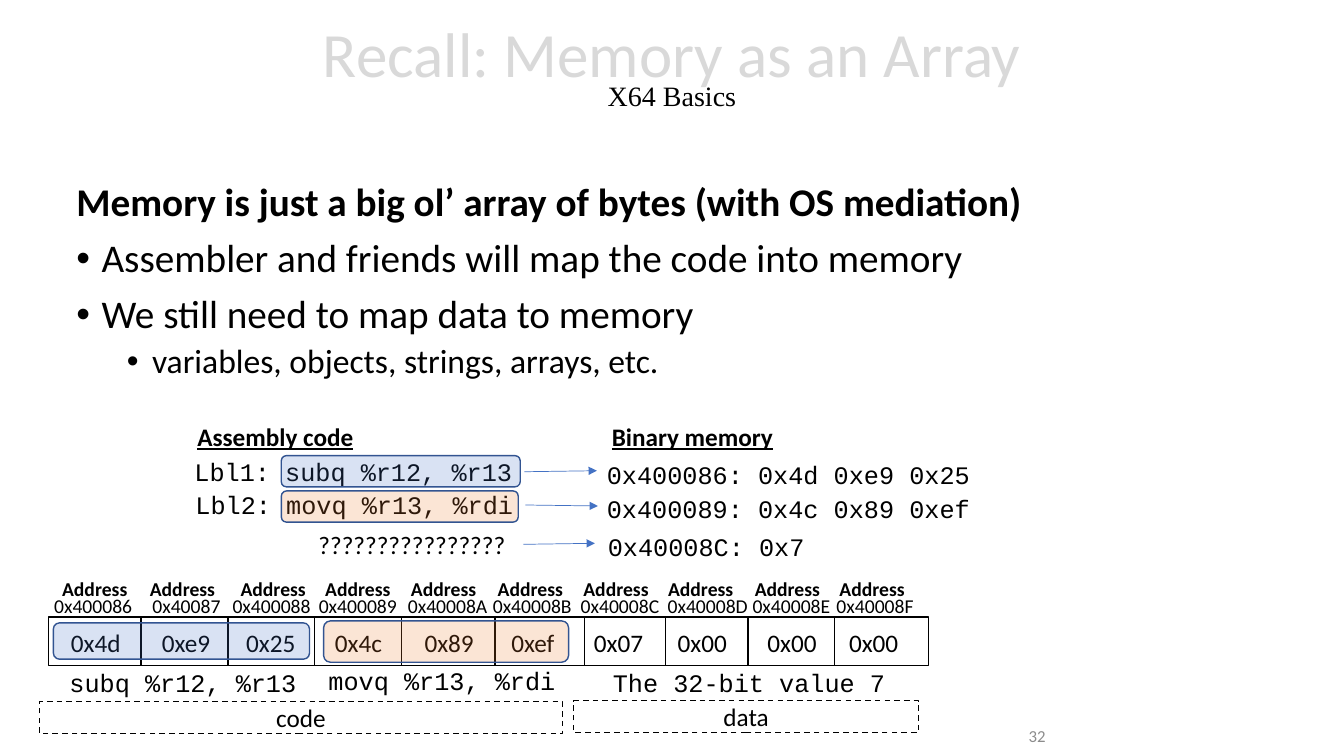
from lxml.etree import SubElement
from pptx import Presentation
from pptx.dml.color import RGBColor
from pptx.enum.dml import MSO_LINE
from pptx.enum.shapes import MSO_CONNECTOR, MSO_SHAPE
from pptx.enum.text import MSO_ANCHOR, MSO_AUTO_SIZE, PP_ALIGN
from pptx.oxml.ns import qn
from pptx.util import Inches, Pt

COLORS = {"black": "000000", "white": "FFFFFF", "title": "D9D9D9", "number": "8C8C8C",
          "blue": "4472C4", "orange": "ED7D31", "border": "325491"}
COLUMN = ROW = Inches(0.1)
MONO = "Courier New"
CELL_TOP, CELL_WIDTH, CELL_HEIGHT = 61.2, 9.3, 4.8
DRAW_ORDER = (7, 8, 9, 6, 5, 0, 1, 2, 3, 4)

# fmt: off
MEMORY = [
    ("0x400086", "0x4d", 4.8, 9.4, 9.25, 9.5),
    ("0x40087", "0xe9", 14, 18.1, 18.5, 18.45),
    ("0x400088", "0x25", 22.6, 27.1, 26.95, 26.85),
    ("0x400089", "0x4c", 31.2, 35.5, 35.5, 35.55),
    ("0x40008A", "0x89", 39.8, 44, 44.4, 44.55),
    ("0x40008B", "0xef", 48.7, 52.6, 52.8, 52.85),
    ("0x40008C", "0x07", 56.7, 61.1, 61.5, 61.35),
    ("0x40008D", "0x00", 65.6, 69.5, 70.2, 69.65),
    ("0x40008E", "0x00", 74.2, 78.1, 78.5, 78.55),
    ("0x40008F", "0x00", 82.8, 86.5, 86.8, 86.65),
]
# fmt: on


def color(name):
    return RGBColor.from_string(COLORS[name])


def grid(left, top, width, height):
    return [round(left * COLUMN), round(top * ROW), round(width * COLUMN), round(height * ROW)]


def add_span(para, text, size=18, font="Calibri", ink="black", bold=False, underline=False):
    span = para.add_run()
    span.text = text
    span.font.size = Pt(size)
    span.font.name = font
    span.font.color.rgb = color(ink)
    span.font.bold = bold
    span.font.underline = underline


def add_text(page, text, place, align=PP_ALIGN.LEFT, wrap=False, side=1, grow=True,
             anchor=MSO_ANCHOR.TOP, **span_format):
    box = page.shapes.add_textbox(*grid(*place))
    frame = box.text_frame
    frame.word_wrap = wrap
    frame.auto_size = MSO_AUTO_SIZE.SHAPE_TO_FIT_TEXT if grow else MSO_AUTO_SIZE.NONE
    frame.vertical_anchor = anchor
    frame.margin_left = frame.margin_right = round(side * COLUMN)
    para = frame.paragraphs[0]
    para.alignment = align
    add_span(para, text, **span_format)
    return box


def add_centered(page, text, center, top, width, height, **text_format):
    place = (center - width / 2, top, width, height)
    return add_text(page, text, place, align=PP_ALIGN.CENTER, **text_format)


def add_box(page, place, kind=MSO_SHAPE.RECTANGLE, fill="white", line="black",
            opacity=None, dashed=False, label=None):
    box = page.shapes.add_shape(kind, *grid(*place))
    box.shadow.inherit = False
    box.fill.solid()
    box.fill.fore_color.rgb = color(fill)
    if opacity:
        tint = box._element.spPr.find(qn("a:solidFill")).find(qn("a:srgbClr"))
        SubElement(tint, qn("a:alpha")).set("val", str(opacity * 1000))
    box.line.color.rgb = color(line)
    box.line.width = Pt(1)
    if dashed:
        box.line.dash_style = MSO_LINE.DASH
    if label:
        box.text_frame.vertical_anchor = MSO_ANCHOR.MIDDLE
        para = box.text_frame.paragraphs[0]
        para.alignment = PP_ALIGN.CENTER
        add_span(para, label)


def add_highlight(page, place, fill):
    add_box(page, place, kind=MSO_SHAPE.ROUNDED_RECTANGLE, fill=fill, line="border", opacity=20)


def add_arrow(page, start, end, source=None):
    points = [round(value * COLUMN) for value in start + end]
    arrow = page.shapes.add_connector(MSO_CONNECTOR.STRAIGHT, *points)
    if source is not None:
        arrow.begin_connect(source, 3)
    arrow.line.color.rgb = color("blue")
    arrow.line.width = Pt(0.5)
    properties = arrow._element.spPr
    SubElement(properties.find(qn("a:ln")), qn("a:tailEnd")).set("type", "triangle")
    SubElement(properties, qn("a:effectLst"))


def add_title(page):
    box = add_text(page, "Recall: Memory as an Array", (0, 0, 133.3, 14.5), wrap=True, grow=False,
                   align=PP_ALIGN.CENTER, anchor=MSO_ANCHOR.MIDDLE, size=45, ink="title")
    para = box.text_frame.paragraphs[0]
    para.line_spacing = 0.7
    para.add_line_break()
    add_span(para, "X64 Basics", size=20, font="Times New Roman")


def format_para(para, before, indent=None):
    para.line_spacing = 0.9
    para.space_before = Pt(before)
    if indent:
        properties = para._p.get_or_add_pPr()
        properties.set("marL", str(Inches(indent)))
        properties.set("indent", str(-Inches(0.25)))
        SubElement(properties, qn("a:buFont")).set("typeface", "Arial")
        SubElement(properties, qn("a:buChar")).set("char", "•")


def add_points(page):
    box = add_text(page, "Memory is just a big ol’ array of bytes (with OS mediation)",
                   (6.6, 17.6, 96.7, 22.6), wrap=True, grow=False, size=28, bold=True)
    format_para(box.text_frame.paragraphs[0], 10)
    for text, level, size, before, indent in (
        ("Assembler and friends will map the code into memory", 0, 28, 10, 0.25),
        ("We still need to map data to memory", 0, 28, 10, 0.25),
        ("variables, objects, strings, arrays, etc.", 1, 24, 5, 0.75),
    ):
        para = box.text_frame.add_paragraph()
        para.level = level
        format_para(para, before, indent)
        add_span(para, text, size=size)


def add_memory(page):
    for index in DRAW_ORDER:
        add_box(page, (MEMORY[index][2], CELL_TOP, CELL_WIDTH, CELL_HEIGHT))
    for address, value, _, label_center, address_center, value_center in MEMORY:
        add_centered(page, "Address", label_center, 56.7, 7.8, 3.4,
                     wrap=True, side=0, size=14, bold=True)
        add_centered(page, address, address_center, 58.4, 9, 3.4, wrap=True, side=0, size=14)
        add_centered(page, value, value_center, 61.7, 6.9, 4)
    add_highlight(page, (5.3, 61.8, 25.4, 3.6), "blue")
    add_highlight(page, (32.1, 61.6, 24.3, 4.1), "orange")
    for text, left, top, width in (("subq %r12, %r13", 5.9, 65.7, 24.6),
                                   ("movq %r13, %rdi", 31.6, 65.5, 24.6),
                                   ("The 32-bit value 7", 59.8, 65.7, 29.2)):
        add_text(page, text, (left, top, width, 4), font=MONO)
    add_box(page, (3.9, 69.6, 51.9, 3.2), dashed=True, label="code")
    add_box(page, (56.9, 69.5, 34.2, 3.2), dashed=True, label="data")


def add_mapping(page):
    add_text(page, "Assembly code", (18.6, 41.3, 17.6, 4), bold=True, underline=True)
    add_text(page, "Binary memory", (59.7, 41.3, 18.1, 4), bold=True, underline=True)
    subtract = add_text(page, "Lbl1: subq %r12, %r13", (18.3, 44.8, 33.7, 4), font=MONO)
    move = add_text(page, "Lbl2: movq %r13, %rdi", (18.4, 48.1, 33.7, 4), font=MONO)
    add_text(page, "????????????????", (30.6, 52, 20.8, 4))
    add_text(page, "0x400086: 0x4d 0xe9 0x25", (59.2, 45.1, 38.2, 4), font=MONO)
    add_text(page, "0x400089: 0x4c 0x89 0xef", (59.2, 48.4, 38.2, 4), font=MONO)
    add_text(page, "0x40008C: 0x7", (59.3, 52.2, 21.6, 4), font=MONO)
    add_highlight(page, (27.9, 48.7, 23.5, 3.1), "orange")
    add_highlight(page, (27.9, 45.2, 23.7, 3.1), "blue")
    add_arrow(page, (52, 46.8), (59.2, 46.7), subtract)
    add_arrow(page, (52.1, 50.1), (59.3, 50.2), move)
    add_arrow(page, (51.9, 54), (59, 53.9))


def main():
    deck = Presentation()
    deck.slide_width, deck.slide_height = Inches(13.33), Inches(7.5)
    page = deck.slides.add_slide(deck.slide_layouts[6])
    add_title(page)
    add_text(page, "32", (82.2, 71, 22.5, 4), align=PP_ALIGN.RIGHT, wrap=True, grow=False,
             anchor=MSO_ANCHOR.MIDDLE, size=12, ink="number")
    add_points(page)
    add_memory(page)
    add_mapping(page)
    deck.save("out.pptx")


if __name__ == "__main__":
    main()
